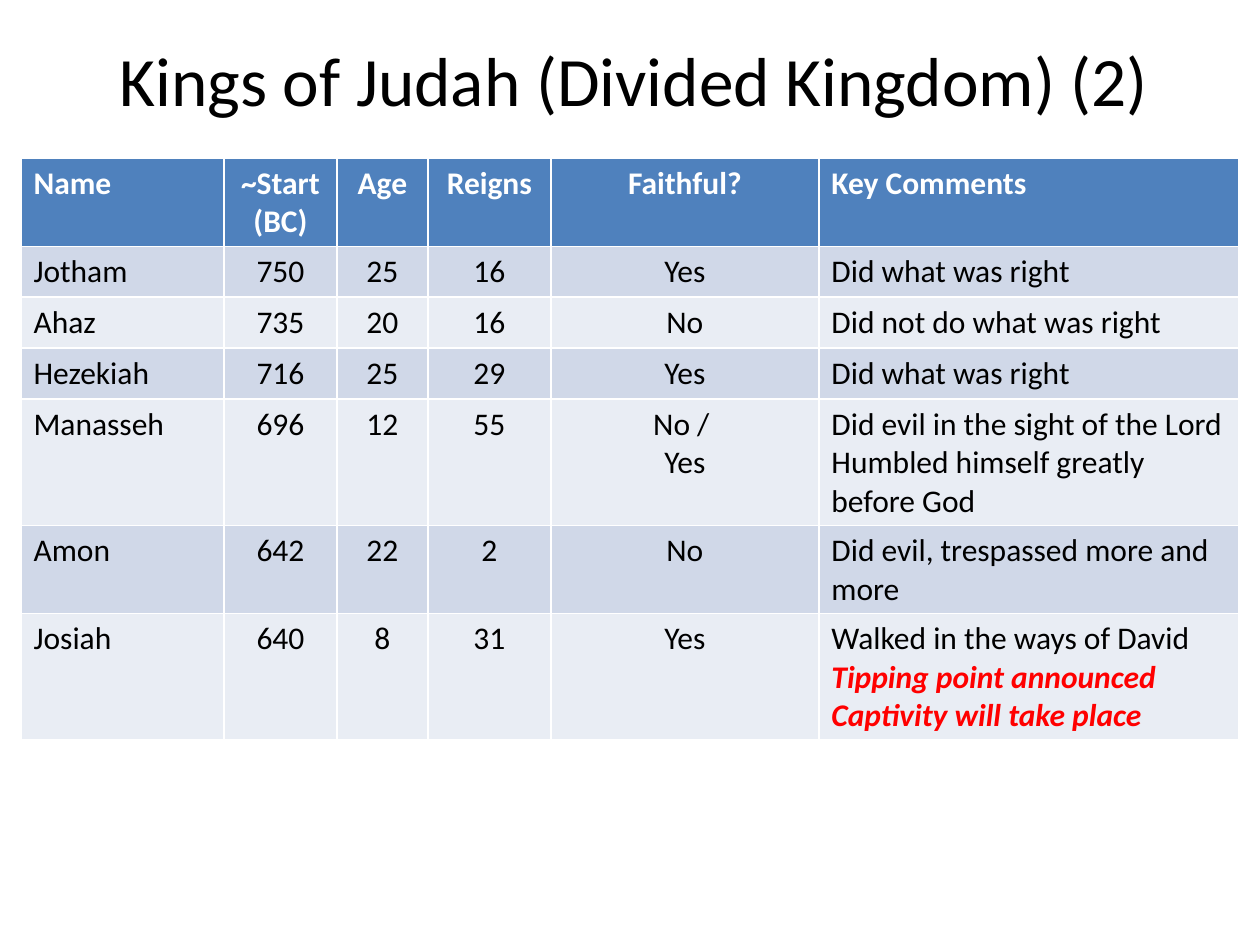
from typing import Any, NamedTuple

from pptx import Presentation
from pptx.dml.color import RGBColor
from pptx.enum.text import MSO_ANCHOR as Anchor, PP_ALIGN as Align
from pptx.util import Pt

EMU_PER_PX = 914400 / 126
BLACK = RGBColor(0x00, 0x00, 0x00)
WHITE = RGBColor(0xFF, 0xFF, 0xFF)
RED = RGBColor(0xFF, 0x00, 0x00)
HEADER_BLUE = RGBColor(0x4F, 0x81, 0xBD)
BAND_DARK = RGBColor(0xD0, 0xD8, 0xE8)
BAND_LIGHT = RGBColor(0xE9, 0xED, 0xF4)

TITLE_FORMAT = {"name": "Calibri", "size": Pt(39.6), "bold": False}
BODY_FORMAT = {"name": "Calibri", "size": Pt(18), "bold": False}
HEADER_FORMAT = BODY_FORMAT | {"bold": True}
WARNING_FORMAT = HEADER_FORMAT | {"italic": True}


class Column(NamedTuple):
    heading: str
    width: int
    align: Align


class King(NamedTuple):
    name: str
    start: str
    age: str
    reign: str
    faithful: str
    comments: str


COLUMNS = [
    Column("Name", 203, Align.LEFT),
    Column("~Start\n(BC)", 113, Align.CENTER),
    Column("Age", 91, Align.CENTER),
    Column("Reigns", 123, Align.CENTER),
    Column("Faithful?", 268, Align.CENTER),
    Column("Key Comments", 420, Align.LEFT),
]
KINGS = [
    King("Jotham", "750", "25", "16", "Yes", "Did what was right"),
    King("Ahaz", "735", "20", "16", "No", "Did not do what was right"),
    King("Hezekiah", "716", "25", "29", "Yes", "Did what was right"),
    King("Manasseh", "696", "12", "55", "No / \nYes",
         "Did evil in the sight of the Lord\nHumbled himself greatly before God"),
    King("Amon", "642", "22", "2", "No", "Did evil, trespassed more and more"),
    King("Josiah", "640", "8", "31", "Yes",
         "Walked in the ways of David\nTipping point announced\nCaptivity will take place"),
]
WARNINGS = {"Tipping point announced", "Captivity will take place"}
ROW_HEIGHT = 51


def px(length: int) -> int:
    return round(length * EMU_PER_PX)


def write_text(frame: Any, text: str, align: Align, color: RGBColor,
               font_format: dict[str, Any]) -> None:
    frame.text = text
    for paragraph in frame.paragraphs:
        paragraph.alignment = align
        warning = paragraph.text in WARNINGS
        for run in paragraph.runs:
            run.font.color.rgb = RED if warning else color
            for attribute, value in (WARNING_FORMAT if warning else font_format).items():
                setattr(run.font, attribute, value)


def add_title(slide: Any, text: str) -> None:
    frame = slide.shapes.add_textbox(px(67), 0, px(1134), px(158)).text_frame
    frame.word_wrap = True
    frame.vertical_anchor = Anchor.MIDDLE
    write_text(frame, text, Align.CENTER, BLACK, TITLE_FORMAT)


def add_kings_table(slide: Any, left: int, top: int) -> None:
    rows = [[column.heading for column in COLUMNS], *KINGS]
    width = sum(column.width for column in COLUMNS)
    table = slide.shapes.add_table(len(rows), len(COLUMNS), px(left), px(top),
                                   px(width), px(ROW_HEIGHT * len(rows))).table
    for index, column in enumerate(COLUMNS):
        table.columns[index].width = px(column.width)
    for row_index, texts in enumerate(rows):
        table.rows[row_index].height = px(ROW_HEIGHT)
        if row_index == 0:
            fill, color, font_format = HEADER_BLUE, WHITE, HEADER_FORMAT
        else:
            fill = BAND_DARK if row_index % 2 else BAND_LIGHT
            color, font_format = BLACK, BODY_FORMAT
        for column_index, text in enumerate(texts):
            cell = table.cell(row_index, column_index)
            cell.fill.solid()
            cell.fill.fore_color.rgb = fill
            write_text(cell.text_frame, text, COLUMNS[column_index].align, color, font_format)


def main() -> None:
    presentation = Presentation()
    presentation.slide_width = px(1260)
    presentation.slide_height = px(945)
    slide = presentation.slides.add_slide(presentation.slide_layouts[6])
    add_title(slide, "Kings of Judah (Divided Kingdom) (2)")
    add_kings_table(slide, 21, 158)
    presentation.save("out.pptx")


if __name__ == "__main__":
    main()
